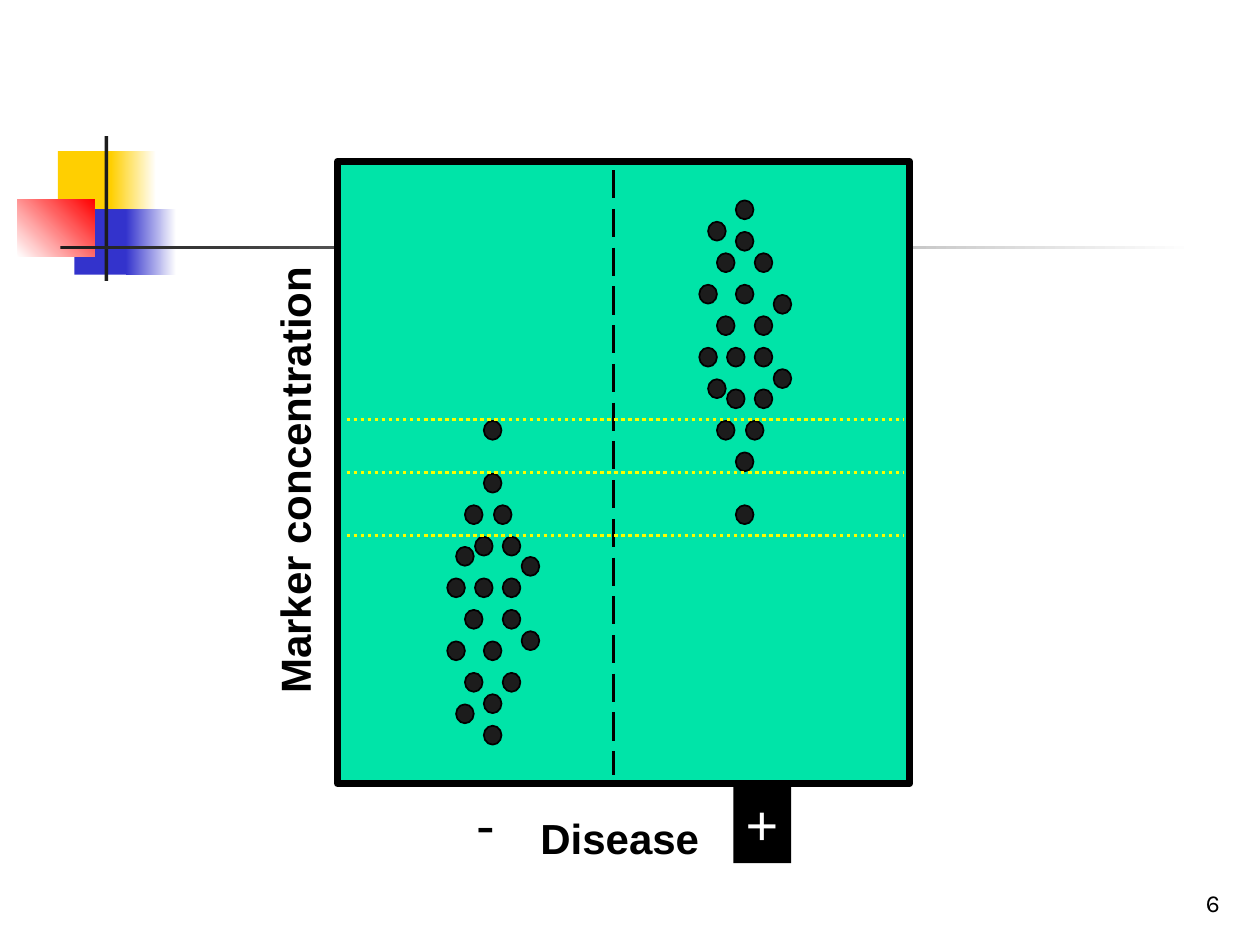
"""Build a slide plotting marker concentration by disease status with three cut-offs."""
from pptx import Presentation
from pptx.dml.color import RGBColor
from pptx.enum import dml, shapes, text
from pptx.oxml.ns import qn
from pptx.util import Inches, Pt

COLORS = {
    "black": "000000", "white": "FFFFFF", "ink": "1C1C1C", "yellow": "FFCF01",
    "blue": "3333CC", "red": "FF0000", "green": "00E4A8", "cutoff": "FAFD00",
}
RGB = {name: RGBColor.from_string(value) for name, value in COLORS.items()}


def add_shape(parent, kind, box, fill, line=None):
    sp = parent.shapes.add_shape(kind, *map(Inches, box))
    sp.shadow.inherit = False
    if isinstance(fill, tuple):
        start, end, angle = fill
        sp.fill.gradient()
        sp.fill.gradient_angle = angle
        for stop, color in zip(sp.fill.gradient_stops, (start, end)):
            stop.color.rgb = RGB[color]
    else:
        sp.fill.solid()
        sp.fill.fore_color.rgb = RGB[fill]
    if line:
        sp.line.color.rgb = RGB["black"]
        sp.line.width = Pt(line)
    else:
        sp.line.fill.background()
    return sp


def write(sp, words, frame, font, align=text.PP_ALIGN.LEFT, color="black"):
    tf = sp.text_frame
    for name, value in frame.items():
        setattr(tf, name, value)
    p = tf.paragraphs[0]
    p.alignment = align
    r = p.add_run()
    r.text = words
    for name, value in font.items():
        setattr(r.font, name, value)
    r.font.color.rgb = RGB[color]


prs = Presentation()
prs.slide_width, prs.slide_height = Inches(10), Inches(7.5)
s = prs.slides.add_slide(prs.slide_layouts[6])
RECT, OVAL = shapes.MSO_SHAPE.RECTANGLE, shapes.MSO_SHAPE.OVAL

ornament = [
    ((0.46, 1.2, 0.48, 0.52), "yellow"),
    ((0.88, 1.2, 0.36, 0.52), ("yellow", "white", 0)),
    ((0.59, 1.66, 0.46, 0.52), "blue"),
    ((1, 1.66, 0.4, 0.52), ("blue", "white", 0)),
    ((0.14, 1.58, 0.61, 0.46), ("white", "red", 45)),
    ((0.83, 1.08, 0.03, 1.15), "ink"),
    ((0.48, 1.95, 9, 0.03), ("ink", "white", 0)),
]
for box, fill in ornament:
    add_shape(s, RECT, box, fill)

number = s.shapes.add_textbox(*map(Inches, (7.7, 6.83, 2.08, 0.5)))
write(number, "6", {"word_wrap": True, "vertical_anchor": text.MSO_ANCHOR.BOTTOM},
      {"size": Pt(14), "name": "Karla"}, text.PP_ALIGN.RIGHT)

add_shape(s, RECT, (2.68, 1.28, 4.54, 4.94), "green", 4)

negative_dots = [
    (3.69, 4.01), (3.77, 4.59), (3.69, 4.84), (3.84, 5.09), (3.84, 5.76),
    (3.84, 5.51), (3.92, 4.01), (3.84, 3.76), (3.55, 4.59), (3.99, 4.59),
    (3.99, 4.84), (3.69, 5.34), (3.77, 4.26), (3.55, 5.09), (4.14, 5.01),
    (3.99, 5.34), (3.84, 3.34), (4.14, 4.42), (3.62, 4.34), (3.62, 5.59),
    (3.99, 4.26),
]
positive_dots = [(x + 2, 7.35 - y) for x, y in negative_dots]
for dots in (negative_dots, positive_dots):
    group = s.shapes.add_group_shape()
    for x, y in dots:
        add_shape(group, OVAL, (x, y, 0.14, 0.15), "ink", 1)

label_frame = {"word_wrap": False, "auto_size": text.MSO_AUTO_SIZE.SHAPE_TO_FIT_TEXT,
               "vertical_anchor": text.MSO_ANCHOR.TOP}
title_font = {"size": Pt(24), "name": "Arial", "bold": True}
sign_font = {"size": Pt(32), "name": "Arial"}

labels = [
    ("Marker concentration", (0.54, 3.56, 3.59, 0.5), title_font, 270),
    ("-", (3.68, 6.22, 0.35, 0.63), sign_font, 0),
    ("Disease", (4.19, 6.4, 1.46, 0.5), title_font, 0),
]
for words, box, font, rotation in labels:
    sp = s.shapes.add_textbox(*map(Inches, box))
    sp.rotation = rotation
    write(sp, words, label_frame, font)

plus = add_shape(s, RECT, (5.82, 6.22, 0.46, 0.63), "black")
write(plus, "+", label_frame, sign_font, color="white")

DASH, DOT = dml.MSO_LINE.LONG_DASH, dml.MSO_LINE.ROUND_DOT
lines = [((4.87, 1.35, 4.87, 6.15), "black", DASH)]
lines += [((2.75, y, 7.17, y), "cutoff", DOT) for y in (3.33, 4.25, 3.75)]
for ends, color, dash in lines:
    line = s.shapes.add_connector(shapes.MSO_CONNECTOR.STRAIGHT, *map(Inches, ends))
    line.line.color.rgb = RGB[color]
    line.line.width = Pt(2)
    line.line.dash_style = dash
    props = line._element.spPr
    props.append(props.makeelement(qn("a:effectLst"), {}))

prs.save("out.pptx")
